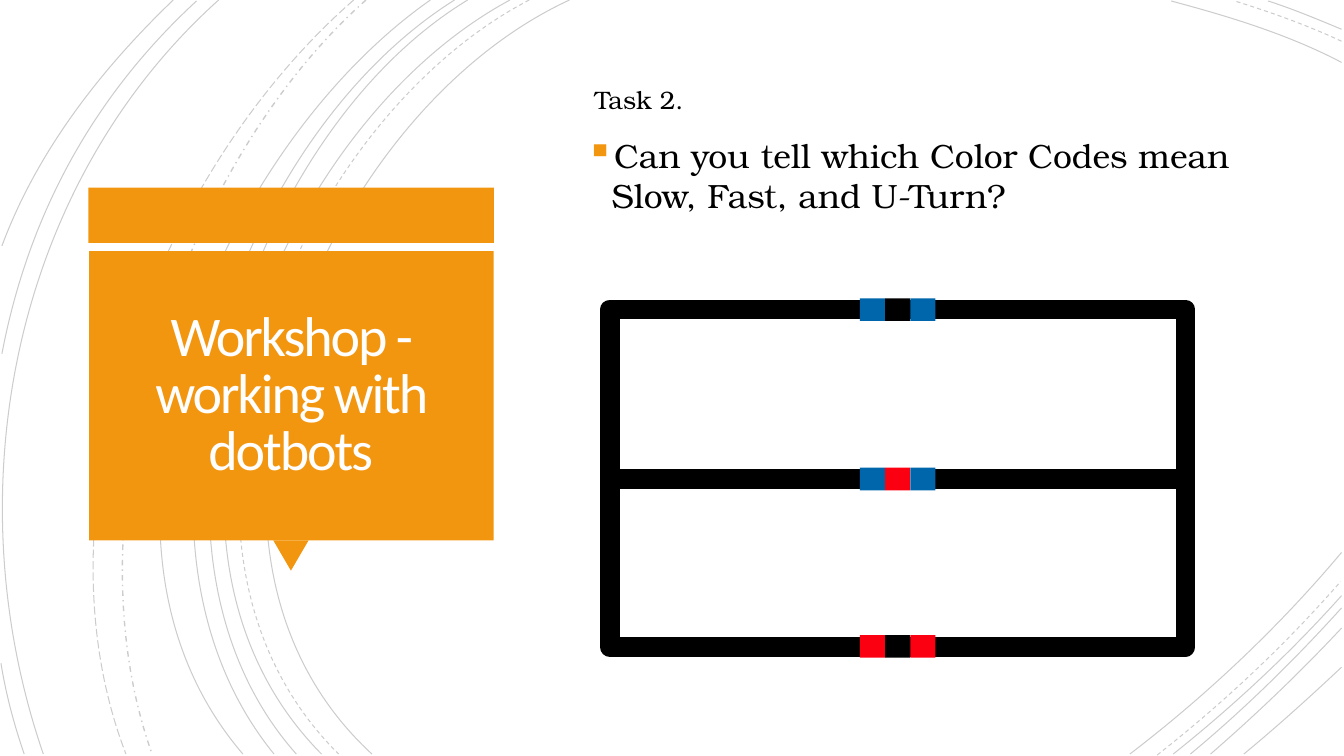
from lxml.etree import SubElement
from pptx import Presentation
from pptx.dml.color import RGBColor
from pptx.enum.dml import MSO_LINE as Dash
from pptx.enum.shapes import MSO_CONNECTOR as Connector, MSO_SHAPE as Shape
from pptx.enum.text import MSO_ANCHOR as Anchor, PP_ALIGN as Align
from pptx.oxml.ns import qn
from pptx.util import Pt

COLORS = {
    "black": "000000", "white": "FFFFFF", "title": "FFFEFF",
    "orange": "F3960F", "red": "FB0011", "blue": "0066AC",
}
SERIF = "TeX Gyre Bonum"


def rgb(name):
    return RGBColor.from_string(COLORS[name])


def add_text(page, text, left, top, width, height, *, size, font=SERIF, color="black",
             align=Align.LEFT, anchor=Anchor.TOP, inset=3.6, line_spacing=None,
             space_before=None, tracking=None, bullet=None):
    """Add a one-paragraph text box; tracking is in hundredths of a point."""
    box = page.shapes.add_textbox(Pt(left), Pt(top), Pt(width), Pt(height))
    frame = box.text_frame
    frame.word_wrap = True
    frame.vertical_anchor = anchor
    frame.margin_top = frame.margin_bottom = Pt(inset)
    para = frame.paragraphs[0]
    para.alignment = align
    para.line_spacing = line_spacing
    if space_before:
        para.space_before = Pt(space_before)
    span = para.add_run()
    span.text = text
    span.font.size = Pt(size)
    span.font.name = font
    span.font.color.rgb = rgb(color)
    if tracking:
        span.font._element.set("spc", str(tracking))
    if bullet:
        props = para._p.get_or_add_pPr()
        props.set("marL", str(Pt(18)))
        props.set("indent", str(Pt(-18)))
        SubElement(SubElement(props, qn("a:buClr")), qn("a:srgbClr"), val=COLORS["orange"])
        SubElement(props, qn("a:buSzPct"), val="110000")
        SubElement(props, qn("a:buChar"), char=bullet)


deck = Presentation()
deck.slide_width, deck.slide_height = Pt(960), Pt(540)
page = deck.slides.add_slide(deck.slide_layouts[6])
page.background.fill.solid()
page.background.fill.fore_color.rgb = rgb("white")

# Background arcs: dash, line width, then start, two control points and end
arcs = [
    (Dash.SOLID, 0.75, (406.8, 0), (226.8, 82.8), (103, 388.8), (265.7, 538.6)),
    (Dash.SOLID, 0.75, (958.3, 44.6), (920.2, 24.5), (877, 11.5), (836.6, 0.7)),
    (Dash.SOLID, 0.75, (807.1, 538.6), (861.8, 496.8), (913.7, 447.8), (958.3, 394.6)),
    (Dash.DASH, 0.75, (378, 0), (205.2, 90), (88.6, 386.6), (241.9, 538.6)),
    (Dash.DASH, 0.75, (958.3, 29.5), (933.8, 18), (907.2, 8.6), (882, 0.7)),
    (Dash.DASH, 0.75, (826.6, 539.3), (873.4, 502.6), (918, 460.8), (957.6, 415.4)),
    (Dash.SOLID, 0.75, (364.3, 0), (194.4, 91.4), (79.2, 386.6), (229.7, 538.6)),
    (Dash.SOLID, 0.75, (958.3, 20.9), (941, 13.7), (923.8, 6.5), (905.8, 0.7)),
    (Dash.SOLID, 0.75, (838.1, 538.6), (880.6, 504.7), (921.6, 466.6), (958.3, 425.5)),
    (Dash.SOLID, 0.75, (334.1, 0), (175.7, 95.8), (79.2, 389.5), (211.7, 538.6)),
    (Dash.SOLID, 0.75, (850.3, 538.6), (888.5, 506.9), (924.5, 471.6), (958.3, 434.2)),
    (Dash.SOLID, 0.75, (324.7, 0), (166.3, 99.4), (69.8, 383.8), (195.8, 538.6)),
    (Dash.SOLID, 0.75, (864.7, 538.6), (897.1, 510.5), (928.8, 480.2), (958.3, 448.6)),
    (Dash.SOLID, 0.75, (307.4, 0), (156.2, 105.8), (38.2, 380.9), (173.5, 538.6)),
    (Dash.SOLID, 0.75, (888.5, 538.6), (912.2, 519.1), (935.3, 498.2), (958.3, 476.6)),
    (Dash.DASH_DOT, 1, (261.4, 0), (126.7, 119.5), (46.8, 366.5), (108.7, 538.6)),
    (Dash.LONG_DASH, 0.75, (252.7, 0), (113, 121.7), (20.9, 359.3), (90, 538.6)),
    (Dash.SOLID, 0.75, (156.2, 0), (7.9, 133.2), (-33.1, 352.8), (31, 538.6)),
    (Dash.SOLID, 0.75, (140.4, 0.7), (66.2, 69.1), (20.2, 154.1), (1.4, 252.7)),
    (Dash.SOLID, 0.75, (0.7, 473.8), (4.3, 496.1), (10.1, 517.7), (17.3, 538.6)),
    (Dash.SOLID, 0.75, (123.8, 0), (72, 49.7), (26.6, 108), (1.4, 175.7)),
]
arc_group = page.shapes.add_group_shape()
for dash, weight, *points in arcs:
    start, *bends = [(Pt(x), Pt(y)) for x, y in points]
    builder = arc_group.shapes.build_freeform(*start)
    builder.add_line_segments(bends, close=False)
    arc = builder.convert_to_shape()
    arc.shadow.inherit = False
    arc.fill.background()
    arc.line.width = Pt(weight)
    arc.line.color.rgb = rgb("black")
    arc.line.dash_style = dash
    SubElement(arc._element.xpath(".//a:ln//a:srgbClr")[0], qn("a:alpha"), val="20000")
    # Merge the three straight segments into one cubic curve
    curve, *rest = arc._element.xpath(".//a:lnTo")
    curve.tag = qn("a:cubicBezTo")
    for segment in rest:
        curve.append(segment[0])
        segment.getparent().remove(segment)

# Title callout
banner_group = page.shapes.add_group_shape()
banner = [
    (Shape.RECTANGLE, 63.2, 134, 289.6, 39.6, 0),
    (Shape.ISOSCELES_TRIANGLE, 195.2, 386, 25.2, 21.6, 180),
    (Shape.RECTANGLE, 63.6, 179.4, 289, 206.6, 0),
]
for kind, left, top, width, height, turn in banner:
    part = banner_group.shapes.add_shape(kind, Pt(left), Pt(top), Pt(width), Pt(height))
    part.rotation = turn
    part.shadow.inherit = False
    part.fill.solid()
    part.fill.fore_color.rgb = rgb("orange")
    part.line.fill.background()

add_text(page, "Can you tell which Color Codes mean Slow, Fast, and U-Turn?",
         411.8, 92.9, 493.2, 133.9, size=24, space_before=10, bullet="▪")
add_text(page, "Workshop - working with dotbots", 69.8, 186.5, 275.8, 193.7,
         size=40, font="Calibri", color="title", align=Align.CENTER,
         anchor=Anchor.MIDDLE, inset=7.2, line_spacing=0.85, tracking=-150)
add_text(page, "Task 2.", 417.6, 56.9, 121, 28.8, size=18)

# Robot track
track = page.shapes.add_group_shape()
loop = track.shapes.add_shape(Shape.RECTANGLE, Pt(435.6), Pt(221), Pt(411.2), Pt(241.2))
loop.shadow.inherit = False
loop.fill.background()
loop.line.color.rgb = rgb("black")
loop.line.width = Pt(14)
SubElement(loop.line._get_or_add_ln(), qn("a:round"))

for start_x, end_x in [(668.2, 846), (439.2, 614.2)]:
    road = track.shapes.add_connector(Connector.STRAIGHT, Pt(start_x), Pt(342), Pt(end_x), Pt(342))
    road.line.color.rgb = rgb("black")
    road.line.width = Pt(14)
    SubElement(road._element.spPr, qn("a:effectLst"))

# Color codes on the three roads
codes = [
    (334.1, ("blue", "red", "blue")),
    (453.6, ("red", "black", "red")),
    (213.1, ("blue", "black", "blue")),
]
for top, code in codes:
    for index, color in enumerate(code):
        block = track.shapes.add_shape(
            Shape.RECTANGLE, Pt(614.2 + 18 * index), Pt(top), Pt(18), Pt(16.2))
        block.shadow.inherit = False
        block.fill.solid()
        block.fill.fore_color.rgb = rgb(color)
        block.line.fill.background()

deck.save("out.pptx")
